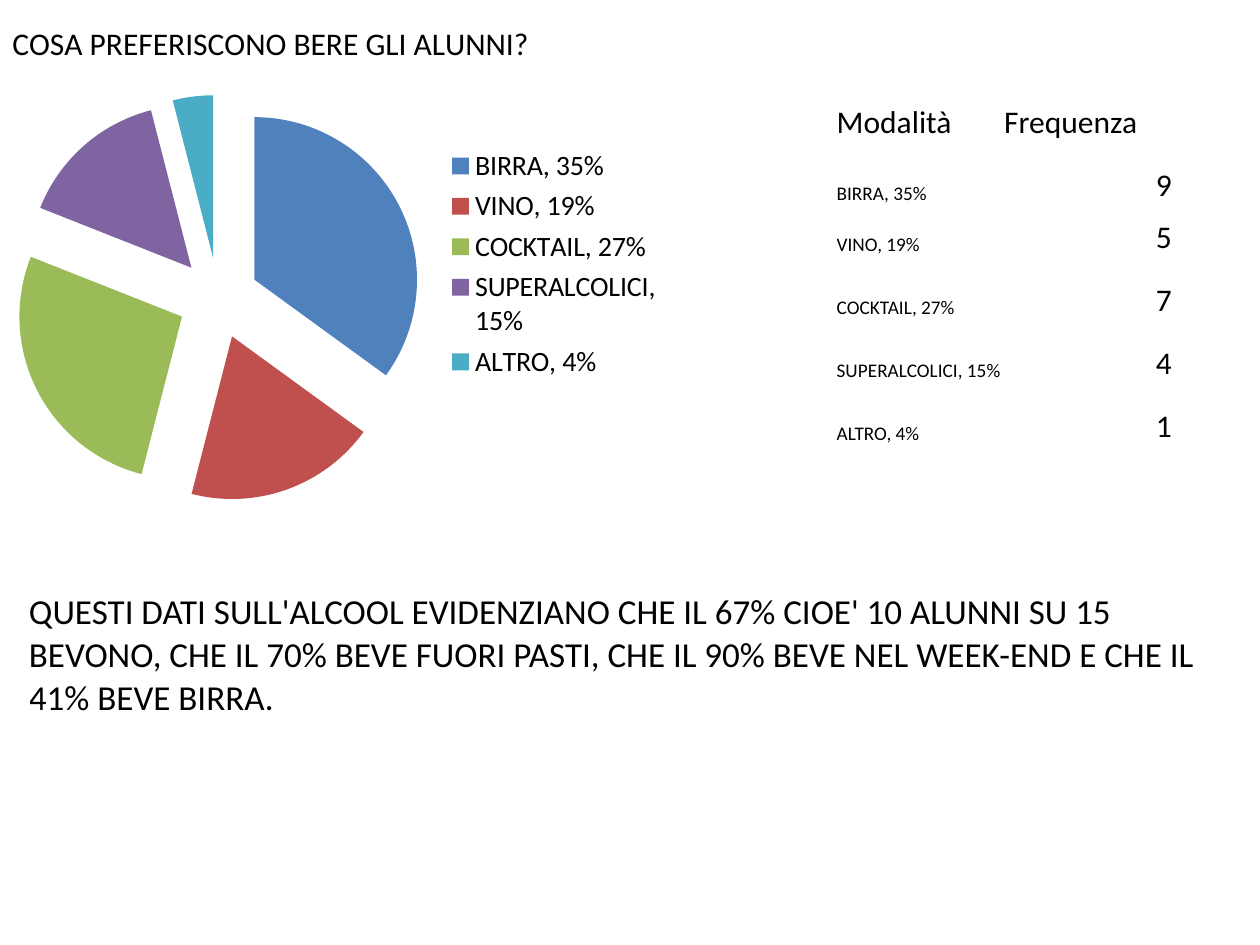
from lxml import etree
from pptx import Presentation, util as u
from pptx.chart import data as cd
from pptx.dml.color import RGBColor
from pptx.enum import chart as ce, text as te
from pptx.oxml.ns import qn

FONT, BLACK = "Calibri", "000000"
W, H = 10, 7.5

# Drink, share in percent, frequency, slice colour
DRINKS = [
    ("BIRRA", 35, 9, "4F81BD"),
    ("VINO", 19, 5, "C0504D"),
    ("COCKTAIL", 27, 7, "9BBB59"),
    ("SUPERALCOLICI", 15, 4, "8064A2"),
    ("ALTRO", 4, 1, "4BACC6"),
]
LABELS = [f"{name}, {share}%" for name, share, _, _ in DRINKS]
COMMENT = ("QUESTI DATI SULL'ALCOOL EVIDENZIANO CHE IL 67% CIOE' 10 ALUNNI SU 15 "
           "BEVONO, CHE IL 70% BEVE FUORI PASTI, CHE IL 90% BEVE NEL WEEK-END "
           "E CHE IL 41% BEVE BIRRA.")


def colour(hex_code):
    return RGBColor.from_string(hex_code)


def style_font(font, size):
    font.name, font.size, font.bold = FONT, u.Pt(size), False
    font.color.rgb = colour(BLACK)


def fill_cell(cell, value, size, anchor, align=te.PP_ALIGN.LEFT):
    cell.fill.background()
    cell.margin_left = cell.margin_right = cell.margin_top = cell.margin_bottom = 0
    cell.vertical_anchor = anchor
    cell.text_frame.text = value
    p = cell.text_frame.paragraphs[0]
    p.alignment = align
    style_font(p.runs[0].font, size)


def add_plain_table(s, left, top, col_widths, row_heights):
    """Add a table without banding at the given grid sizes in inches."""
    box = [u.Inches(v) for v in (left, top, sum(col_widths), sum(row_heights))]
    table = s.shapes.add_table(len(row_heights), len(col_widths), *box).table
    table.first_row = table.horz_banding = False
    for col, width in zip(table.columns, col_widths):
        col.width = u.Inches(width)
    for row, height in zip(table.rows, row_heights):
        row.height = u.Inches(height)
    return table


def place(element, index, inner=False, **shares):
    """Fix a chart part at shares of the chart's size."""
    for old in element.findall(qn("c:layout")):
        element.remove(old)
    layout = etree.Element(qn("c:layout"))
    element.insert(index, layout)
    manual = etree.SubElement(layout, qn("c:manualLayout"))
    settings = [("layoutTarget", "inner")] if inner else []
    settings += [("xMode", "edge"), ("yMode", "edge"), *shares.items()]
    for tag, value in settings:
        etree.SubElement(manual, qn(f"c:{tag}")).set("val", str(value))


def add_pie(s):
    data = cd.CategoryChartData()
    data.categories = LABELS
    data.add_series("Series 1", [share for _, share, _, _ in DRINKS])
    chart = s.shapes.add_chart(ce.XL_CHART_TYPE.PIE_EXPLODED, 0, 0,
                               u.Inches(5.33), u.Inches(4.19), data).chart
    style_font(chart.font, 10)

    # Slices
    plot = chart.plots[0]
    plot.vary_by_categories = True
    series = plot.series[0]
    for i, (_, _, _, hex_code) in enumerate(DRINKS):
        fill = series.points[i].format.fill
        fill.solid()
        fill.fore_color.rgb = colour(hex_code)
    for explosion in series._element.iter(qn("c:explosion")):
        explosion.set("val", "25")

    # Title and legend
    tf = chart.chart_title.text_frame
    tf.text = "COSA PREFERISCONO BERE GLI ALUNNI?"
    style_font(tf.paragraphs[0].runs[0].font, 18)
    chart.chart_title.include_in_layout = False
    chart.has_legend = True
    chart.legend.position = ce.XL_LEGEND_POSITION.RIGHT
    chart.legend.include_in_layout = False
    style_font(chart.legend.font, 16)

    # Positions inside the chart
    place(chart.chart_title._element, 1, x=0.01, y=0.03)
    place(chart.legend._element, 1, x=0.66, y=0.27, w=0.33, h=0.46)
    plot_area = chart._chartSpace.find(".//" + qn("c:plotArea"))
    place(plot_area, 0, inner=True, x=0.02, y=0.18, w=0.61, h=0.77)


def add_frequencies(s):
    table = add_plain_table(s, 6.64, 0.31, [1.33] * 2,
                            [0.82, 0.5, 0.41, 0.5, 0.5, 0.5])
    bottom = te.MSO_ANCHOR.BOTTOM
    for c, heading in enumerate(("Modalità", "Frequenza")):
        fill_cell(table.cell(0, c), heading, 18, bottom)
    for r, (label, drink) in enumerate(zip(LABELS, DRINKS), 1):
        fill_cell(table.cell(r, 0), label, 11, bottom)
        fill_cell(table.cell(r, 1), str(drink[2]), 18, bottom, te.PP_ALIGN.RIGHT)


def add_comment(s):
    table = add_plain_table(s, 0.23, 4.69, [9.45], [1.53])
    fill_cell(table.cell(0, 0), COMMENT, 20, te.MSO_ANCHOR.TOP)


def main():
    prs = Presentation()
    prs.slide_width, prs.slide_height = u.Inches(W), u.Inches(H)
    s = prs.slides.add_slide(prs.slide_layouts[6])
    add_frequencies(s)
    add_pie(s)
    add_comment(s)
    prs.save("out.pptx")


if __name__ == "__main__":
    main()
